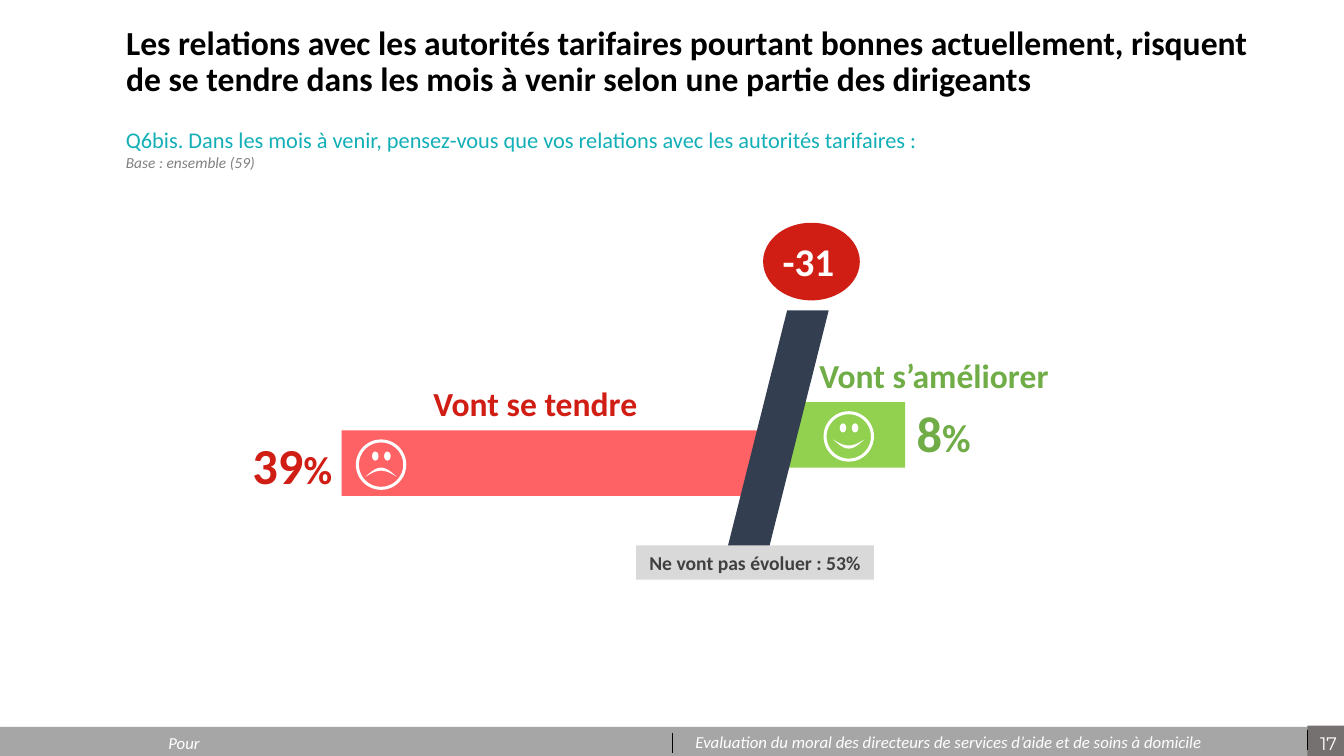
from dataclasses import dataclass
from math import pi, sin
from typing import NamedTuple

from lxml import etree
from pptx import Presentation
from pptx import util as u
from pptx.dml.color import RGBColor
from pptx.enum import shapes, text
from pptx.oxml.ns import qn

WIDTH, HEIGHT = u.Inches(13.333), u.Inches(7.5)
SHAPE = shapes.MSO_SHAPE
ALIGN = text.PP_ALIGN


@dataclass(frozen=True)
class Theme:
    font: str = "Calibri"
    number_font: str = "Montserrat"
    black: str = "000000"
    white: str = "FFFFFF"
    teal: str = "13AFB7"
    base_grey: str = "808080"
    footer_grey: str = "A6A6A6"
    number_grey: str = "767171"
    label_grey: str = "D9D9D9"
    label_text: str = "404040"
    slate: str = "333F50"
    red: str = "D11E15"
    coral: str = "FF6265"
    green: str = "70AD47"
    lime: str = "92D050"
    figure: float = 36
    sign: float = 28
    heading: float = 24
    question: float = 16
    label: float = 14
    number: float = 12.9
    footer: float = 12
    base: float = 11


THEME = Theme()


class Area(NamedTuple):
    """Left, top, width and height in percent of the slide's size."""
    left: float
    top: float
    width: float
    height: float

    def emu(self) -> tuple[int, int, int, int]:
        return across(self.left), down(self.top), across(self.width), down(self.height)


class Span(NamedTuple):
    words: str
    size: float
    color: str
    bold: bool = False
    italic: bool = False
    font: str = THEME.font


class Block(NamedTuple):
    area: Area
    fill: str
    kind: int = SHAPE.RECTANGLE


class Caption(NamedTuple):
    area: Area
    spans: list[Span]
    align: int = ALIGN.CENTER
    wrap: bool = True
    inset: float = 0.75


class Face(NamedTuple):
    left: float
    top: float
    happy: bool


def across(share: float) -> int:
    return round(WIDTH * share / 100)


def down(share: float) -> int:
    return round(HEIGHT * share / 100)


def write(para, spans: list[Span], *, align=ALIGN.LEFT, spacing: float = 1.0) -> None:
    para.alignment, para.line_spacing = align, spacing
    for span in spans:
        run = para.add_run()
        run.text = span.words
        font = run.font
        font.name, font.size = span.font, u.Pt(span.size)
        font.bold, font.italic = span.bold, span.italic
        font.color.rgb = RGBColor.from_string(span.color)


def paint(shape, fill: str):
    shape.shadow.inherit = False
    shape.fill.solid()
    shape.fill.fore_color.rgb = RGBColor.from_string(fill)
    shape.line.fill.background()
    return shape


def add_block(page, block: Block):
    return paint(page.shapes.add_shape(block.kind, *block.area.emu()), block.fill)


def add_caption(page, caption: Caption) -> None:
    frame = page.shapes.add_textbox(*caption.area.emu()).text_frame
    frame.word_wrap = caption.wrap
    frame.margin_left = frame.margin_right = across(caption.inset)
    write(frame.paragraphs[0], caption.spans, align=caption.align)


def add_divider(page, left: float, top: float) -> None:
    x, y = across(left), down(top)
    line = page.shapes.add_connector(shapes.MSO_CONNECTOR.STRAIGHT, x, y, x, y + down(2.67))
    line.line.width = u.Pt(0.5)
    line.line.color.rgb = RGBColor.from_string(THEME.black)
    etree.SubElement(line._element.spPr, qn("a:effectLst"))


def add_face(page, face: Face) -> None:
    """Ring, two eyes and a crescent mouth, placed by shares of the ring's diameter."""
    size = u.Inches(0.5)
    x, y = across(face.left), down(face.top)
    group = page.shapes.add_group_shape()
    ring = paint(group.shapes.add_shape(SHAPE.DONUT, x, y, size, size), THEME.white)
    ring.adjustments[0] = 0.06
    for eye in (0.32, 0.56):
        paint(group.shapes.add_shape(SHAPE.OVAL, x + int(eye * size), y + int(0.24 * size),
                                     int(0.13 * size), int(0.18 * size)), THEME.white)

    corner, bend = (0.56, 1) if face.happy else (0.74, -1)
    steps = 24

    def curve(step: int, depth: float) -> tuple[int, int]:
        share = step / steps
        return (x + int((0.19 + 0.62 * share) * size),
                y + int((corner + bend * depth * sin(pi * share)) * size))

    outer = [curve(step, 0.18) for step in range(steps + 1)]
    inner = [curve(step, 0.12) for step in range(steps, -1, -1)]
    mouth = group.shapes.build_freeform(*outer[0])
    mouth.add_line_segments(outer[1:] + inner, close=True)
    paint(mouth.convert_to_shape(), THEME.white)


def figure(number: str, color: str) -> list[Span]:
    return [Span(number, THEME.figure, color, bold=True), Span("%", THEME.sign, color, bold=True)]


def heading(words: str, color: str) -> list[Span]:
    return [Span(words, THEME.heading, color, bold=True)]


def footnote(words: str) -> list[Span]:
    return [Span(words, THEME.footer, THEME.white, italic=True)]


def add_footer(page) -> None:
    add_block(page, Block(Area(0, 96.13, 100, 3.87), THEME.footer_grey))
    add_block(page, Block(Area(97.28, 96, 2.72, 4), THEME.number_grey))
    add_divider(page, 97.28, 96.53)
    add_divider(page, 50, 96.93)
    number = Span("17", THEME.number, THEME.white, font=THEME.number_font)
    for caption in (
        Caption(Area(97.7, 96.27, 2.3, 3.73), [number], inset=0),
        Caption(Area(11.78, 96.27, 10, 3.73), footnote("Pour"), ALIGN.LEFT),
        Caption(Area(51, 96.13, 43.13, 3.87), footnote(
            "Evaluation du moral des directeurs de services d’aide et de soins à domicile"),
            ALIGN.LEFT),
    ):
        add_caption(page, caption)


def add_heading(page) -> None:
    title = page.shapes.title
    title.left, title.top, title.width, title.height = Area(8.63, 4.13, 86.25, 8.27).emu()
    frame = title.text_frame
    frame.auto_size, frame.word_wrap = text.MSO_AUTO_SIZE.NONE, True
    frame.vertical_anchor = text.MSO_ANCHOR.MIDDLE
    write(frame.paragraphs[0], heading(
        "Les relations avec les autorités tarifaires pourtant bonnes actuellement, risquent "
        "de se tendre dans les mois à venir selon une partie des dirigeants", THEME.black),
        spacing=0.9)

    box = page.shapes.add_textbox(*Area(8.63, 16.4, 82.65, 7.33).emu())
    box.text_frame.word_wrap = True
    write(box.text_frame.paragraphs[0], [Span(
        "Q6bis. Dans les mois à venir, pensez-vous que vos relations avec les autorités "
        "tarifaires :", THEME.question, THEME.teal)], spacing=0.9)
    write(box.text_frame.add_paragraph(),
          [Span("Base : ensemble (59)", THEME.base, THEME.base_grey, italic=True)])


def add_balance(page) -> None:
    add_block(page, Block(Area(57.3, 53.2, 10.05, 8.67), THEME.lime))
    add_block(page, Block(Area(25.43, 56.93, 31.43, 8.67), THEME.coral))
    pivot = add_block(page, Block(Area(53.93, 41.07, 7.73, 32.8), THEME.slate,
                                  SHAPE.PARALLELOGRAM))
    pivot.adjustments[0] = 0.6
    unchanged = add_block(page, Block(Area(47.33, 72.13, 17.7, 4.53), THEME.label_grey))
    unchanged.text_frame.word_wrap = True
    write(unchanged.text_frame.paragraphs[0], [Span(
        "Ne vont pas évoluer : 53%", THEME.label, THEME.label_text, bold=True)],
        align=ALIGN.CENTER)
    add_block(page, Block(Area(56.78, 29.47, 7.2, 10.27), THEME.red, SHAPE.OVAL))
    for caption in (
        Caption(Area(67.43, 52.53, 5.55, 9.47), figure("8", THEME.green), wrap=False),
        Caption(Area(18, 56.8, 7.5, 9.47), figure("39", THEME.red), wrap=False),
        Caption(Area(30.53, 50, 18.6, 6.67), heading("Vont se tendre", THEME.red)),
        Caption(Area(57.98, 46.27, 23.03, 6.67), heading("Vont s’améliorer", THEME.green)),
        Caption(Area(57.45, 30.8, 5.4, 7.6),
                [Span("-31", THEME.sign, THEME.white, bold=True)], wrap=False),
    ):
        add_caption(page, caption)
    for face in (Face(61.28, 54.4, True), Face(26.48, 58.13, False)):
        add_face(page, face)


def main() -> None:
    deck = Presentation()
    deck.slide_width, deck.slide_height = WIDTH, HEIGHT
    page = deck.slides.add_slide(deck.slide_layouts[5])
    add_footer(page)
    add_heading(page)
    add_balance(page)
    deck.save("out.pptx")


if __name__ == "__main__":
    main()
